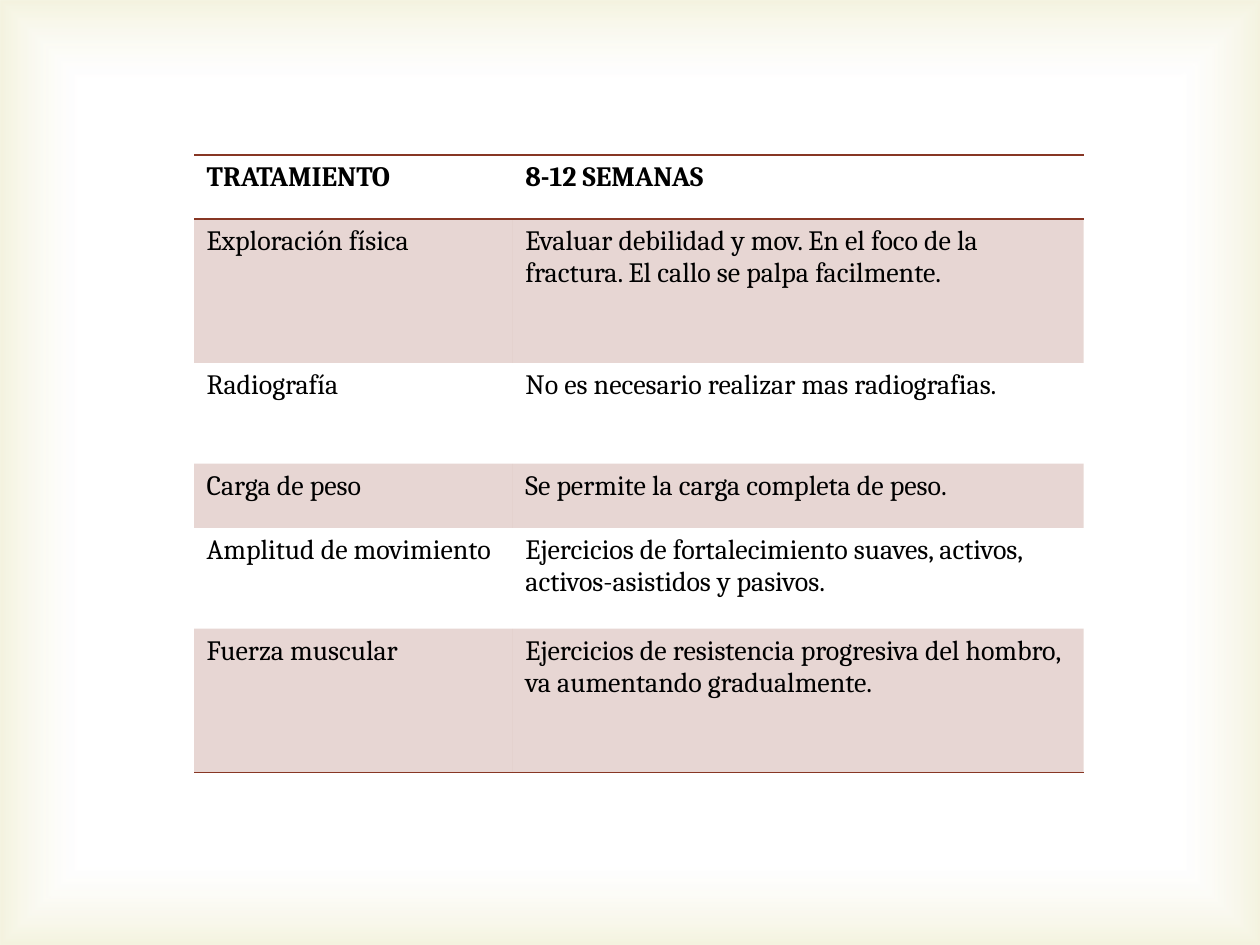
from typing import NamedTuple

from lxml import etree
from pptx import Presentation
from pptx import util as u
from pptx.dml.color import RGBColor
from pptx.enum import shapes
from pptx.oxml import ns

WHITE = RGBColor(0xFF, 0xFF, 0xFF)
BLACK = RGBColor(0, 0, 0)
STRAW = RGBColor(0xD1, 0xCA, 0x75)
RUST = RGBColor(0x87, 0x36, 0x24)
FONT = "Cambria"
PLAIN = "{2D5ABB26-0587-4C30-8999-92F81FD0307C}"  # no style, no grid
WIDTH, HEIGHT = u.Inches(10), u.Inches(7.5)
COLS = (2.53, 4.53)


class Row(NamedTuple):
    label: str
    detail: str
    height: float


class Stop(NamedTuple):
    place: float
    color: RGBColor
    alpha: int


ROWS = (
    Row("TRATAMIENTO", "8-12 SEMANAS", 0.51),
    Row("Exploración física", "Evaluar debilidad y mov. En el foco de la fractura. "
        "El callo se palpa facilmente.", 1.14),
    Row("Radiografía", "No es necesario realizar mas radiografias.", 0.8),
    Row("Carga de peso", "Se permite la carga completa de peso.", 0.51),
    Row("Amplitud de movimiento", "Ejercicios de fortalecimiento suaves, activos, "
        "activos-asistidos y pasivos.", 0.8),
    Row("Fuerza muscular", "Ejercicios de resistencia progresiva del hombro, "
        "va aumentando gradualmente.", 1.14),
)
STOPS = (Stop(0.83, WHITE, 11), Stop(1, STRAW, 23))


def add(parent, tag: str, **attrs):
    return etree.SubElement(parent, ns.qn(tag), attrs)


def fade(root, *alphas: int) -> None:
    """Give each RGB colour below root its opacity in percent."""
    for color, alpha in zip(root.iter(ns.qn("a:srgbClr")), alphas):
        add(color, "a:alpha", val=str(alpha * 1000))


def draw_glow(slide) -> None:
    """Cover the slide with a tint that deepens toward its edges."""
    glow = slide.shapes.add_shape(shapes.MSO_SHAPE.RECTANGLE, 0, 0, WIDTH, HEIGHT)
    glow.shadow.inherit = False
    glow.line.fill.background()
    glow.fill.gradient()
    for mark, stop in zip(glow.fill.gradient_stops, STOPS):
        mark.position = stop.place
        mark.color.rgb = stop.color
    grad = glow._element.spPr.find(ns.qn("a:gradFill"))
    fade(grad, *(stop.alpha for stop in STOPS))
    grad.remove(grad.find(ns.qn("a:lin")))
    route = add(grad, "a:path", path="rect")
    add(route, "a:fillToRect", **dict.fromkeys("ltrb", "50000"))


def rule(cell, side: str) -> None:
    """Draw a one-point line on the T or B side of a cell."""
    line = add(cell._tc.get_or_add_tcPr(), f"a:ln{side}", w=str(u.Pt(1)))
    add(add(line, "a:solidFill"), "a:srgbClr", val=str(RUST))


def fill_cell(cell, words: str, head: bool, band: bool) -> None:
    cell.text_frame.text = words
    font = cell.text_frame.paragraphs[0].runs[0].font
    font.name, font.size, font.bold = FONT, u.Pt(16), head
    font.color.rgb = BLACK
    if band:
        cell.fill.solid()
        cell.fill.fore_color.rgb = RUST
        fade(cell._tc.tcPr.find(ns.qn("a:solidFill")), 20)
    else:
        cell.fill.background()


def draw_table(slide) -> None:
    high = sum(row.height for row in ROWS)
    table = slide.shapes.add_table(
        len(ROWS), len(COLS), u.Inches(1.54), u.Inches(1.23),
        u.Inches(sum(COLS)), u.Inches(high)).table
    table._tbl.tblPr.find(ns.qn("a:tableStyleId")).text = PLAIN
    for col, width in zip(table.columns, COLS):
        col.width = u.Inches(width)
    for i, row in enumerate(ROWS):
        table.rows[i].height = u.Inches(row.height)
        head, last = i == 0, i == len(ROWS) - 1
        for cell, words in zip(table.rows[i].cells, (row.label, row.detail)):
            if head:
                rule(cell, "T")
            if head or last:
                rule(cell, "B")
            fill_cell(cell, words, head, i % 2 == 1)


def main() -> None:
    deck = Presentation()
    deck.slide_width, deck.slide_height = WIDTH, HEIGHT
    slide = deck.slides.add_slide(deck.slide_layouts[6])
    draw_glow(slide)
    draw_table(slide)
    deck.save("out.pptx")


if __name__ == "__main__":
    main()
